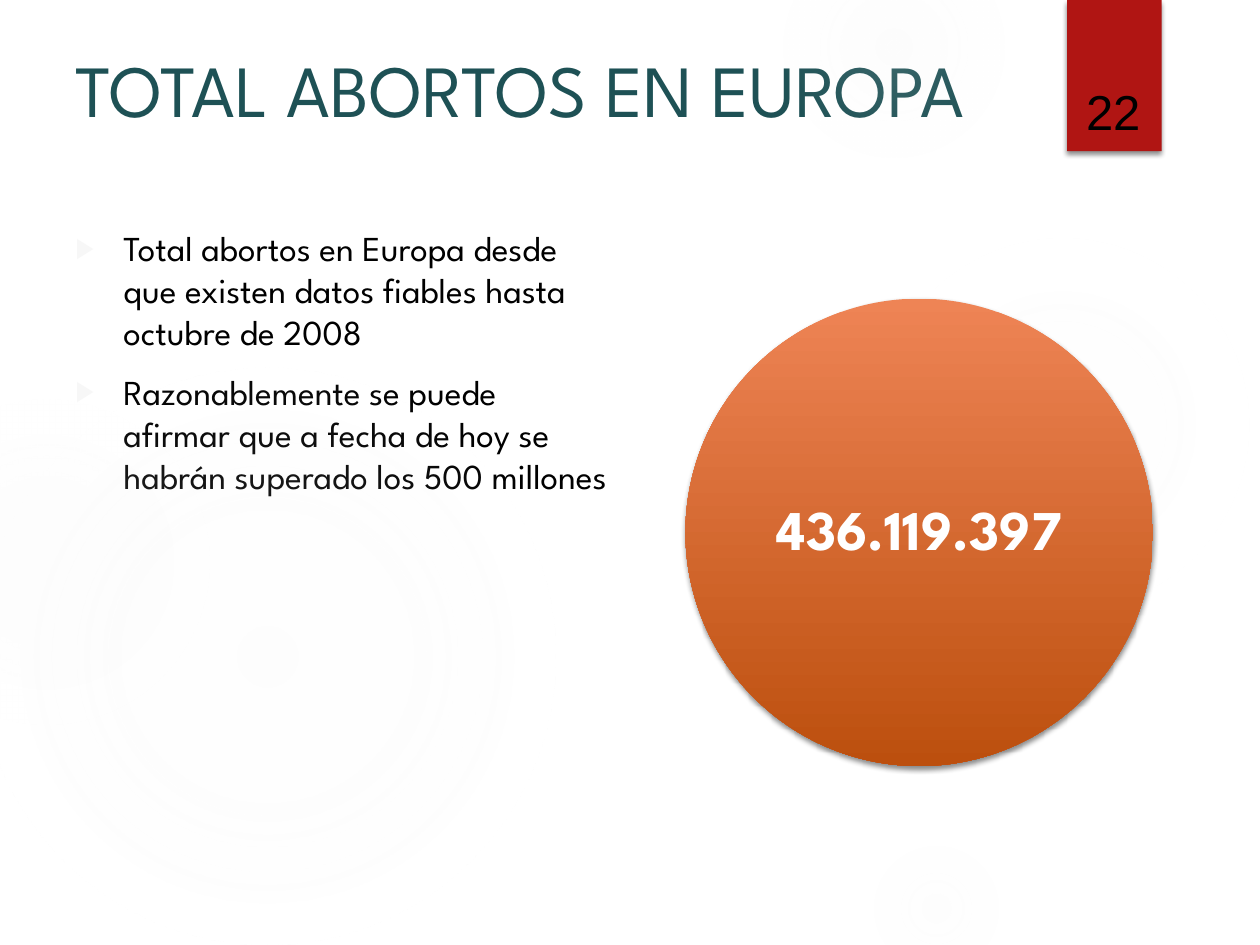
"""Build the slide on total abortions in Europe."""
from pptx import Presentation
from pptx.dml.color import RGBColor
from pptx.enum.shapes import MSO_SHAPE as Shape
from pptx.enum.text import MSO_ANCHOR as Anchor, PP_ALIGN as Align
from pptx.oxml.ns import qn
from pptx.util import Inches, Pt
from lxml.etree import SubElement

color = RGBColor.from_string


def add_node(parent, tag, **attributes):
    """Append a drawing element with the given attributes."""
    return SubElement(parent, qn(f"a:{tag}"), {key: str(value) for key, value in attributes.items()})


def add_gradient_circle(left, top, size, stops):
    """Add a borderless circle with (position, colour, opacity) stops and return it with its gradient."""
    circle = slide.shapes.add_shape(Shape.OVAL, Inches(left), Inches(top), Inches(size), Inches(size))
    circle.shadow.inherit = False
    circle.line.fill.background()
    circle.fill.gradient()
    gradient = circle._element.spPr.find(qn("a:gradFill"))
    for child in list(gradient):
        gradient.remove(child)
    stop_list = add_node(gradient, "gsLst")
    for position, shade, opacity in stops:
        stop = add_node(stop_list, "gs", pos=position * 1000)
        add_node(add_node(stop, "srgbClr", val=shade), "alpha", val=opacity * 1000)
    return circle, gradient


deck = Presentation()
deck.slide_width, deck.slide_height = Inches(10), Inches(7.5)
slide = deck.slides.add_slide(deck.slide_layouts[1])
title, body = slide.placeholders

halos = [
    (6.89, 1.83, 3.08, 7, 6, 69),
    (6.22, -0.5, 1.75, 14, 7, 73),
    (6.89, 6.67, 1.08, 9, 5, 66),
    (-0.17, 2.92, 4.58, 11, 10, 75),
    (-0.92, 3.17, 2.58, 8, 8, 72),
]
for left, top, size, inner, middle, edge in halos:
    stops = [(0, "F3F3F3", inner), (36, "F3F3F3", middle), (edge, "F3F3F3", 0)]
    halo, gradient = add_gradient_circle(left, top, size, stops)
    radial = add_node(gradient, "path", path="circle")
    add_node(radial, "fillToRect", l=50000, t=50000, r=50000, b=50000)

ribbon = slide.shapes.add_shape(Shape.RECTANGLE, Inches(8.47), Inches(0), Inches(0.75), Inches(1.2))
ribbon.shadow.inherit = False
ribbon.fill.solid()
ribbon.fill.fore_color.rgb = color("B01513")
ribbon.line.fill.background()

total, gradient = add_gradient_circle(5.44, 2.37, 3.71, [(0, "EE8455", 100), (100, "BC4F0E", 100)])
add_node(gradient, "lin", ang=90 * 60000, scaled=0)

for shape in (ribbon, total):
    effects = shape._element.spPr.find(qn("a:effectLst"))
    shadow = add_node(effects, "outerShdw", blurRad=Pt(3), dist=Pt(2), dir=90 * 60000, rotWithShape=0)
    add_node(add_node(shadow, "srgbClr", val="000000"), "alpha", val=45000)

title.left, title.top, title.width, title.height = Inches(0.5), Inches(0.3), Inches(9), Inches(1.25)
title.text_frame.text = "TOTAL ABORTOS EN EUROPA"
title.text_frame.vertical_anchor = Anchor.TOP
title.text_frame.paragraphs[0].alignment = Align.LEFT

body.left, body.top, body.width, body.height = Inches(0.5), Inches(1.75), Inches(4.42), Inches(4.95)
body.text_frame.text = (
    "Total abortos en Europa desde que existen datos fiables hasta octubre de 2008\n"
    "Razonablemente se puede afirmar que a fecha de hoy se habrán superado los 500 millones"
)
for para in body.text_frame.paragraphs:
    para.space_before = Pt(10)
    properties = para._p.get_or_add_pPr()
    properties.set("marL", str(Inches(0.38)))
    properties.set("indent", str(Inches(-0.38)))
    add_node(add_node(properties, "buClr"), "srgbClr", val="F7F7F7")
    add_node(properties, "buSzPct", val=80000)
    add_node(properties, "buFont", typeface="Arial")
    add_node(properties, "buChar", char="▶")

total.text_frame.text = "436.119.397"
total.text_frame.word_wrap = True
total.text_frame.vertical_anchor = Anchor.MIDDLE
total.text_frame.margin_left = total.text_frame.margin_right = Inches(0.04)
total.text_frame.margin_top = total.text_frame.margin_bottom = Inches(0.04)
total.text_frame.paragraphs[0].alignment = Align.CENTER
total.text_frame.paragraphs[0].line_spacing = 0.9

page_number = slide.shapes.add_textbox(Inches(8.49), Inches(0.32), Inches(0.69), Inches(0.84))
page_number.text_frame.text = "22"
page_number.text_frame.word_wrap = True
page_number.text_frame.vertical_anchor = Anchor.BOTTOM
page_number.text_frame.paragraphs[0].alignment = Align.CENTER

text_styles = [
    (title, "League Spartan", 42, "1E5155", False),
    (body, "League Spartan", 20, "000000", False),
    (total, "League Spartan", 32, "FFFFFF", True),
    (page_number, "Arial", 28, "000000", False),
]
for box, font_name, size, shade, bold in text_styles:
    for para in box.text_frame.paragraphs:
        for span in para.runs:
            span.font.name = font_name
            span.font.size = Pt(size)
            span.font.color.rgb = color(shade)
            span.font.bold = bold

deck.save("out.pptx")
